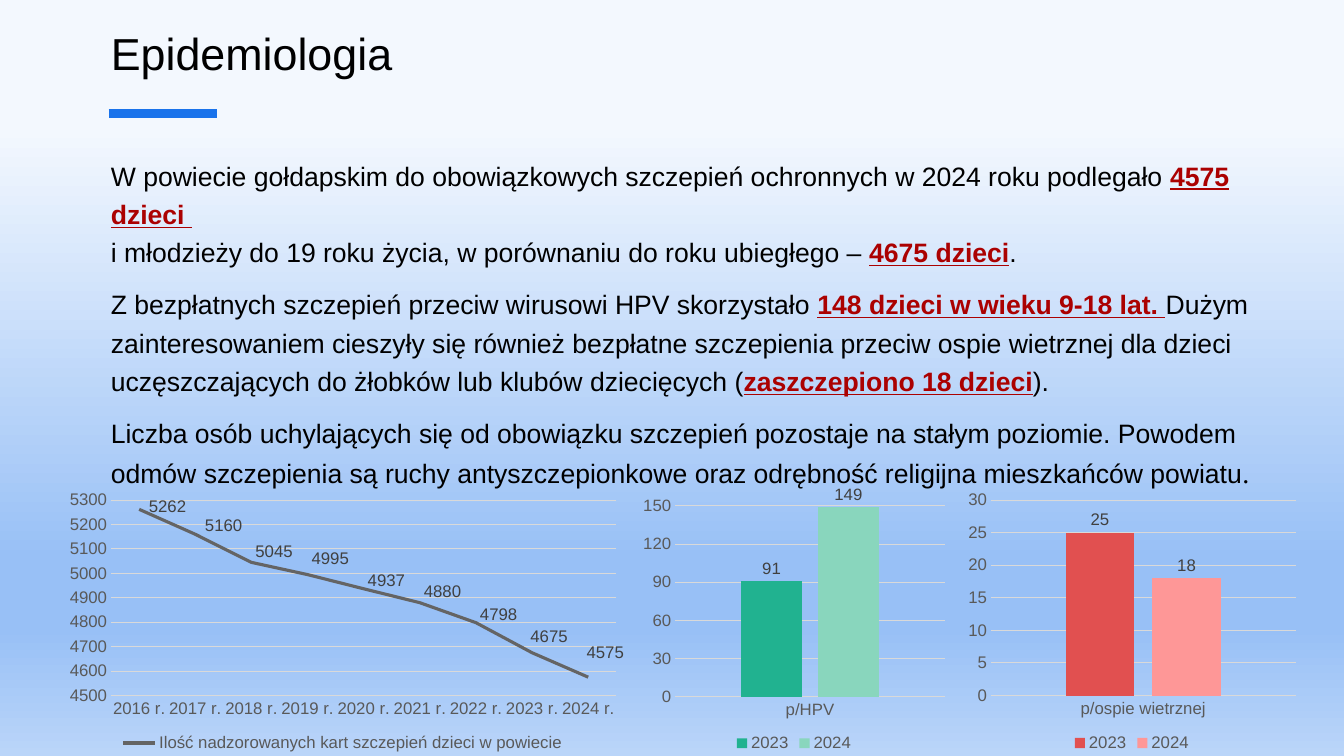
from copy import deepcopy

from lxml import etree
from pptx import Presentation
from pptx.chart import data as cd
from pptx.dml import color as dc
from pptx.enum import chart as ch, shapes, text
from pptx.oxml import ns
from pptx.util import Cm, Pt

COLORS = {
    "text": "000000", "accent": "AB0101", "bar": "1973EB",
    "axis": "595959", "label": "404040", "grid": "D9D9D9", "trend": "646464",
    "hpv_2023": "21B290", "hpv_2024": "89D6BD",
    "pox_2023": "E15050", "pox_2024": "FE9797",
}
BACKGROUND = [(17, "F3F8FE"), (74, "98C0F6"), (83, "98C0F6"), (100, "BAD5F9")]
FONT = "Arial"
C15 = "http://schemas.microsoft.com/office/drawing/2012/chart"
BODY = [
    [("W powiecie gołdapskim do obowiązkowych szczepień ochronnych w 2024 roku podlegało ", False),
     ("4575 dzieci ", True), None,
     ("i młodzieży do 19 roku życia, w porównaniu do roku ubiegłego – ", False),
     ("4675 dzieci", True), (".", False)],
    [("Z bezpłatnych szczepień przeciw wirusowi HPV skorzystało ", False),
     ("148 dzieci w wieku 9-18 lat. ", True),
     ("Dużym zainteresowaniem cieszyły się również bezpłatne szczepienia przeciw ospie wietrznej "
      "dla dzieci uczęszczających do żłobków lub klubów dziecięcych (", False),
     ("zaszczepiono 18 dzieci", True), (").", False)],
    [("Liczba osób uchylających się od obowiązku szczepień pozostaje na stałym poziomie. "
      "Powodem odmów szczepienia są ruchy antyszczepionkowe oraz odrębność religijna "
      "mieszkańców powiatu", False)],
]
CARDS = [5262, 5160, 5045, 4995, 4937, 4880, 4798, 4675, 4575]
LABEL_SHIFTS = [(0.01, -0.01), (0.01, -0.03), (0, -0.04), (0, -0.06), (0, -0.03),
                (0, -0.04), (0, -0.03), (-0.01, -0.06), (-0.01, -0.09)]


def rgb(name):
    """Return the palette colour of the given name."""
    return dc.RGBColor.from_string(COLORS[name])


def style_font(font, size, color, name=FONT, bold=False, underline=False):
    """Apply typeface, size, colour and emphasis to a font."""
    font.name, font.size, font.bold, font.underline = name, Pt(size), bold, underline
    font.color.rgb = rgb(color)


def add_text(p, words, **fmt):
    """Append a formatted run to a paragraph."""
    r = p.add_run()
    r.text = words
    style_font(r.font, **fmt)


def place(sp, box):
    """Move a shape to a box given in centimetres."""
    sp.left, sp.top, sp.width, sp.height = map(Cm, box)


def paint_background(s):
    """Fill the slide with the vertical four-stop gradient."""
    fill = s.background.fill
    fill.gradient()
    fill.gradient_angle = 270
    stops = next(s._element.iter(ns.qn("a:gsLst")))
    for _ in range(len(BACKGROUND) - len(stops)):
        stops.append(deepcopy(stops[0]))
    for stop, (pos, color) in zip(fill.gradient_stops, BACKGROUND):
        stop.position = pos / 100
        stop.color.rgb = dc.RGBColor.from_string(color)


def add_heading(s, box):
    """Set the title and the short bar beneath it."""
    sp = s.shapes.title
    place(sp, box)
    tf = sp.text_frame
    tf.vertical_anchor = text.MSO_ANCHOR.MIDDLE
    p = tf.paragraphs[0]
    p.alignment, p.line_spacing = text.PP_ALIGN.LEFT, 0.9
    add_text(p, "Epidemiologia", size=32, color="text")
    left, top = box[0] + 0.2, box[1] + 2.46
    bar = s.shapes.add_connector(shapes.MSO_CONNECTOR.STRAIGHT,
                                 Cm(left), Cm(top), Cm(left + 2.72), Cm(top))
    bar.line.color.rgb, bar.line.width = rgb("bar"), Pt(6)
    etree.SubElement(bar._element.spPr, ns.qn("a:effectLst"))


def add_body(s, box):
    """Write the three paragraphs with emphasised figures."""
    sp = s.placeholders[1]
    place(sp, box)
    tf = sp.text_frame
    tf.word_wrap, tf.auto_size = True, text.MSO_AUTO_SIZE.NONE
    tf.vertical_anchor = text.MSO_ANCHOR.TOP
    for i, parts in enumerate(BODY):
        p = tf.add_paragraph() if i else tf.paragraphs[0]
        p.line_spacing, p.space_before = 1.2, Pt(10 if i else 0)
        pr = p._p.get_or_add_pPr()
        pr.set("marL", "0")
        pr.set("indent", "0")
        etree.SubElement(pr, ns.qn("a:buNone"))
        for part in parts:
            if part is None:
                p.add_line_break()
                etree.SubElement(p._p[-1], ns.qn("a:rPr"), sz="1900")
            else:
                words, strong = part
                add_text(p, words, size=19, color="accent" if strong else "text",
                         bold=strong, underline=strong)
    add_text(p, ".", size=20, color="text", name="Times New Roman")


def add_chart(s, box, kind, cats, series, low, high=None, step=None):
    """Add a chart with the shared axis and legend style."""
    data = cd.CategoryChartData()
    data.categories = cats
    for name, vals, _ in series:
        data.add_series(name, vals)
    chart = s.shapes.add_chart(kind, *map(Cm, box), data).chart
    chart.has_title = False
    style_font(chart.font, 12, "axis")
    chart.has_legend = True
    chart.legend.position = ch.XL_LEGEND_POSITION.BOTTOM
    chart.legend.include_in_layout = False
    style_font(chart.legend.font, 12, "axis")
    cat, val = chart.category_axis, chart.value_axis
    for axis in (cat, val):
        axis.major_tick_mark = axis.minor_tick_mark = ch.XL_TICK_MARK.NONE
        style_font(axis.tick_labels.font, 12, "axis")
    val.minimum_scale, val.maximum_scale, val.major_unit = low, high, step
    val.has_major_gridlines = True
    val.format.line.fill.background()
    for line in (cat.format.line, val.major_gridlines.format.line):
        line.color.rgb, line.width = rgb("grid"), Pt(0.75)
    chart.plots[0].vary_by_categories = False
    return chart


def hide_leader_lines(ser):
    """Switch off the lines that tie moved labels to their points."""
    labels = next(ser._element.iter(ns.qn("c:dLbls")))
    for flag in labels.findall(ns.qn("c:showLeaderLines")):
        flag.set("val", "0")
    ext = etree.SubElement(etree.SubElement(labels, ns.qn("c:extLst")), ns.qn("c:ext"),
                           uri="{CE6537A1-D6FC-4f65-9D91-7224C49458BB}")
    etree.SubElement(ext, f"{{{C15}}}showLeaderLines", nsmap={"c15": C15}, val="0")


def add_trend(s, box):
    """Draw the line of supervised vaccination cards."""
    name = "Ilość nadzorowanych kart szczepień dzieci w powiecie"
    years = [f"{y} r." for y in range(2016, 2025)]
    chart = add_chart(s, box, ch.XL_CHART_TYPE.LINE, years,
                      [(name, CARDS, "trend")], 4500, 5300, 100)
    ser = chart.plots[0].series[0]
    ser.smooth = False
    ser.marker.style = ch.XL_MARKER_STYLE.NONE
    ser.format.line.color.rgb, ser.format.line.width = rgb("trend"), Pt(2.25)
    for i in range(len(CARDS)):
        label = ser.points[i].data_label
        style_font(label.font, 12, "label")
        label.position = ch.XL_LABEL_POSITION.RIGHT
    for node, shift in zip(ser._element.iter(ns.qn("c:dLbl")), LABEL_SHIFTS):
        layout = etree.Element(ns.qn("c:layout"))
        manual = etree.SubElement(layout, ns.qn("c:manualLayout"))
        for axis, value in zip("xy", shift):
            etree.SubElement(manual, ns.qn(f"c:{axis}"), val=str(value))
        node.insert(1, layout)
    hide_leader_lines(ser)


def add_columns(s, box, cat, key, vals, high=None, step=None):
    """Compare 2023 with 2024 in two columns."""
    series = [(str(y), [v], f"{key}_{y}") for y, v in zip((2023, 2024), vals)]
    chart = add_chart(s, box, ch.XL_CHART_TYPE.COLUMN_CLUSTERED, [cat], series, 0, high, step)
    plot = chart.plots[0]
    plot.gap_width, plot.overlap = 219, -27
    for ser, (_, _, color) in zip(plot.series, series):
        ser.format.fill.solid()
        ser.format.fill.fore_color.rgb = rgb(color)
        labels = ser.data_labels
        labels.show_value = True
        labels.position = ch.XL_LABEL_POSITION.OUTSIDE_END
        style_font(labels.font, 12, "label")


def main():
    """Build the epidemiology slide."""
    prs = Presentation()
    prs.slide_width, prs.slide_height = Cm(33.87), Cm(19.05)
    s = prs.slides.add_slide(prs.slide_layouts[1])
    paint_background(s)
    add_heading(s, (2.54, 0.4, 28.78, 2.01))
    add_body(s, (2.54, 3.73, 30.05, 8.31))
    top, height = 12.24, 6.81
    add_trend(s, (1.47, top, 14.35, height))
    add_columns(s, (16.05, top, 7.92, height), "p/HPV", "hpv", (91, 149), 150, 30)
    add_columns(s, (24.23, top, 8.59, height), "p/ospie wietrznej", "pox", (25, 18))
    prs.save("out.pptx")


if __name__ == "__main__":
    main()
